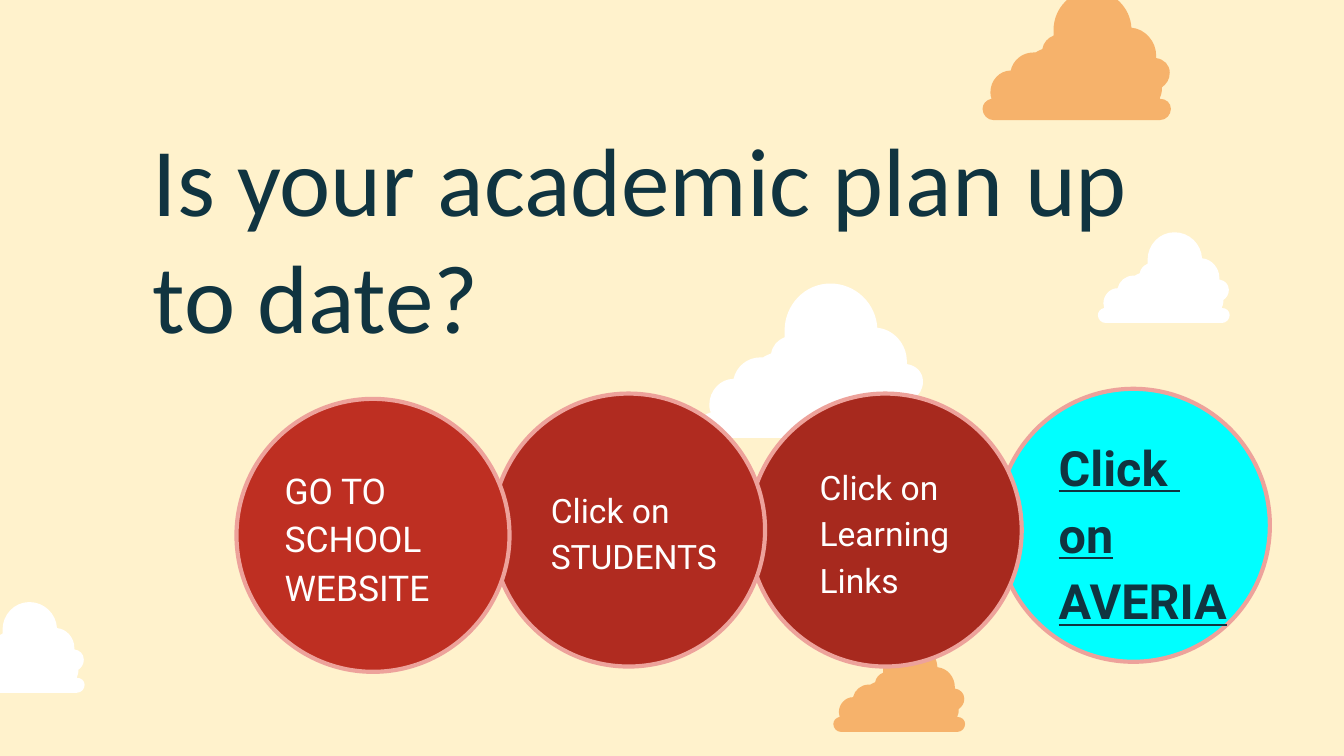
"""Build the academic plan slide: clouds, a question and four step circles."""
from lxml.etree import SubElement
from pptx import Presentation
from pptx.dml.color import RGBColor
from pptx.enum.shapes import MSO_SHAPE as Shape
from pptx.enum.text import MSO_ANCHOR as Anchor, MSO_AUTO_SIZE as AutoSize, PP_ALIGN as Align
from pptx.oxml.ns import qn
from pptx.util import Cm, Pt


def paint(color_format, value):
    color_format.rgb = RGBColor.from_string(value)


def write(box, lines, anchor, font_name, size, color, bold=False, spacing=1.0):
    frame = box.text_frame
    frame.text = "\n".join(lines)
    frame.word_wrap = True
    frame.auto_size = AutoSize.NONE
    frame.vertical_anchor = anchor
    frame.margin_left = frame.margin_right = Cm(0.25)
    frame.margin_top = frame.margin_bottom = Cm(0.25)
    for para in frame.paragraphs:
        para.alignment = Align.LEFT
        para.line_spacing = spacing
        para.space_before = Pt(0)
        para.font.name = font_name
        para.font.size = Pt(size)
        para.font.bold = para.font.underline = bold
        paint(para.font.color, color)


NAVY, WHITE, ORANGE, PINK = "103440", "FFFFFF", "F6B26B", "EDA29B"

deck = Presentation()
deck.slide_width, deck.slide_height = Cm(25.4), Cm(14.29)
page = deck.slides.add_slide(deck.slide_layouts[0])
page.background.fill.solid()
paint(page.background.fill.fore_color, "FFF2CC")

cloud_width = 167
cloud_start = (97, 0)
cloud_segments = [
    (78, 0, 63, 16, 63, 35), (63, 36, 63, 38, 63, 40), (58, 42, 54, 46, 53, 52),
    (51, 53, 48, 54, 47, 55), (46, 55, 45, 55, 45, 55), (35, 55, 27, 62, 25, 71),
    (15, 71, 7, 80, 7, 90), (7, 92, 7, 94, 8, 96), (3, 97, 0, 101, 0, 105),
    (0, 110, 4, 115, 10, 115), (157, 115),
    (163, 115, 167, 110, 167, 105), (167, 100, 163, 96, 157, 96),
    (158, 93, 159, 91, 159, 89), (159, 88, 159, 87, 159, 86),
    (163, 83, 166, 79, 166, 73), (166, 66, 161, 61, 154, 60),
    (154, 59, 154, 59, 154, 58), (154, 45, 144, 34, 132, 33),
    (131, 15, 116, 0, 97, 0),
]
clouds = [
    (13.23, 5.36, 4.24, WHITE),
    (18.57, -0.18, 3.56, ORANGE),
    (20.75, 4.39, 2.49, WHITE),
    (15.75, 12.12, 2.49, ORANGE),
    (-0.89, 11.38, 2.49, WHITE),
]
for left, top, width, color in clouds:
    builder = page.shapes.build_freeform(*cloud_start, scale=Cm(width) / cloud_width)
    builder.add_line_segments([segment[-2:] for segment in cloud_segments], close=True)
    cloud = builder.convert_to_shape(Cm(left), Cm(top))
    lines = list(cloud.element.iter(qn("a:lnTo")))
    for line, segment in zip(lines, cloud_segments):
        if len(segment) == 6:
            line.tag = qn("a:cubicBezTo")
            line.remove(line[0])
            for x, y in zip(segment[::2], segment[1::2]):
                SubElement(line, qn("a:pt"), x=str(x), y=str(y))
    cloud.shadow.inherit = False
    cloud.fill.solid()
    paint(cloud.fill.fore_color, color)
    cloud.line.fill.background()

title, subtitle = page.placeholders
subtitle.element.getparent().remove(subtitle.element)
title.left, title.top, title.width, title.height = Cm(2.64), Cm(2.2), Cm(20.37), Cm(4.72)
write(title, ["Is your academic plan up to date?"], Anchor.BOTTOM, "Calibri", 52, NAVY)

diameter = Cm(5.16)
steps = [
    (18.84, 7.35, "00FFFF", 19.76, 9.28, 4.09, ["Click ", "on AVERIA"], 26, NAVY, True),
    (14.15, 7.44, "A7291E", 15.24, 9.3, 4.22, ["Click on Learning Links"], 18, WHITE, False),
    (9.3, 7.44, "B02B20", 10.16, 9.3, 4.09, ["Click on STUDENTS"], 18, WHITE, False),
    (4.47, 7.54, "BE2F22", 5.13, 9.4, 4.37, ["GO TO SCHOOL WEBSITE"], 19, WHITE, False),
]
for left, top, fill, text_left, text_top, text_width, lines, size, color, bold in steps:
    circle = page.shapes.add_shape(Shape.OVAL, Cm(left), Cm(top), diameter, diameter)
    circle.shadow.inherit = False
    circle.fill.solid()
    paint(circle.fill.fore_color, fill)
    paint(circle.line.color, PINK)
    circle.line.width = Pt(2.25)
    label = page.shapes.add_textbox(Cm(text_left), Cm(text_top), Cm(text_width), Cm(1.45))
    write(label, lines, Anchor.MIDDLE, "Roboto", size, color, bold, 1.15)

deck.save("out.pptx")
